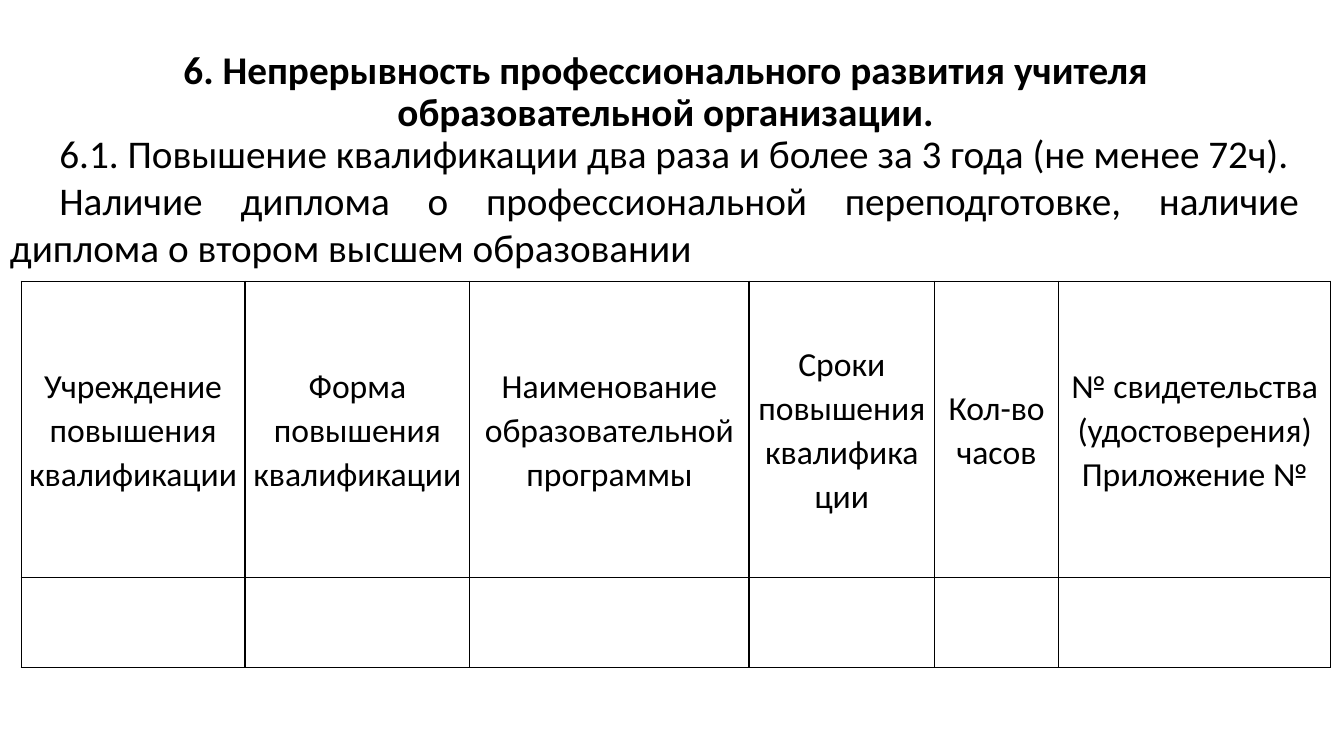
from dataclasses import dataclass

import pptx
import pptx.util
import pptx.dml.color
import pptx.enum.text
from lxml import etree
from pptx.enum.text import MSO_ANCHOR, PP_ALIGN
from pptx.oxml.ns import qn
from pptx.util import Inches


@dataclass(frozen=True)
class Theme:
    font: str = "Calibri"
    ink: str = "000000"
    text_size: int = 28
    table_size: int = 24
    border: float = 1


THEME = Theme()

TITLE = "6. Непрерывность профессионального развития учителя образовательной организации."
BODY = [
    "6.1. Повышение квалификации два раза и более за 3 года (не менее 72ч).",
    "Наличие диплома о профессиональной переподготовке, наличие\vдиплома о втором высшем образовании",
]
COLUMNS = [
    (2.22, ["Учреждение повышения квалификации"]),
    (2.23, ["Форма повышения квалификации"]),
    (2.77, ["Наименование образовательной программы"]),
    (1.84, ["Сроки повышения", "квалификации"]),
    (1.23, ["Кол-во часов"]),
    (2.7, ["№ свидетельства (удостоверения)", "Приложение №"]),
]
ROW_HEIGHTS = [2.94, 0.89]


def write(frame, lines, size, align, spacing=1.0, bold=False, indent=0):
    """Fill a text frame with one paragraph per line."""
    for index, line in enumerate(lines):
        para = frame.add_paragraph() if index else frame.paragraphs[0]
        para.text = line
        para.alignment = align
        para.line_spacing = spacing
        if indent:
            properties = para._p.get_or_add_pPr()
            properties.set("marL", "0")
            properties.set("indent", str(Inches(indent)))
        para.font.name = THEME.font
        para.font.size = pptx.util.Pt(size)
        para.font.bold = bold
        para.font.color.rgb = pptx.dml.color.RGBColor.from_string(THEME.ink)


def add_text(page, left, top, width, height, anchor):
    box = page.shapes.add_textbox(Inches(left), Inches(top), Inches(width), Inches(height))
    box.text_frame.word_wrap = True
    box.text_frame.vertical_anchor = anchor
    return box.text_frame


def outline_cell(cell):
    properties = cell._tc.get_or_add_tcPr()
    for side in ("a:lnL", "a:lnR", "a:lnT", "a:lnB"):
        line = etree.SubElement(properties, qn(side), w=str(pptx.util.Pt(THEME.border)))
        fill = etree.SubElement(line, qn("a:solidFill"))
        etree.SubElement(fill, qn("a:srgbClr"), val=THEME.ink)


def add_training_table(page, left, top):
    width = sum(column_width for column_width, _ in COLUMNS)
    table = page.shapes.add_table(
        len(ROW_HEIGHTS), len(COLUMNS),
        Inches(left), Inches(top), Inches(width), Inches(sum(ROW_HEIGHTS)),
    ).table
    table.first_row = table.horz_banding = False
    for row, height in zip(table.rows, ROW_HEIGHTS):
        row.height = Inches(height)
    for index, (column_width, heading) in enumerate(COLUMNS):
        table.columns[index].width = Inches(column_width)
        write(table.cell(0, index).text_frame, heading, THEME.table_size, PP_ALIGN.CENTER, 1.07)
    for cell in table.iter_cells():
        cell.vertical_anchor = MSO_ANCHOR.MIDDLE
        cell.margin_left = cell.margin_right = Inches(0.07)
        cell.margin_top = cell.margin_bottom = 0
        outline_cell(cell)
        cell.fill.background()


def main():
    deck = pptx.Presentation()
    deck.slide_width, deck.slide_height = Inches(13.33), Inches(7.5)
    page = deck.slides.add_slide(deck.slide_layouts[6])

    title = add_text(page, 0.21, 0.4, 12.78, 1.45, MSO_ANCHOR.TOP)
    title.margin_top = Inches(0.1)
    write(title, [TITLE], THEME.text_size, PP_ALIGN.CENTER, 0.9, bold=True)

    add_training_table(page, 0.21, 2.79)

    body = add_text(page, 0, 1.23, 12.98, 1.51, MSO_ANCHOR.MIDDLE)
    write(body, BODY, THEME.text_size, PP_ALIGN.JUSTIFY, indent=0.49)

    deck.save("out.pptx")


if __name__ == "__main__":
    main()
